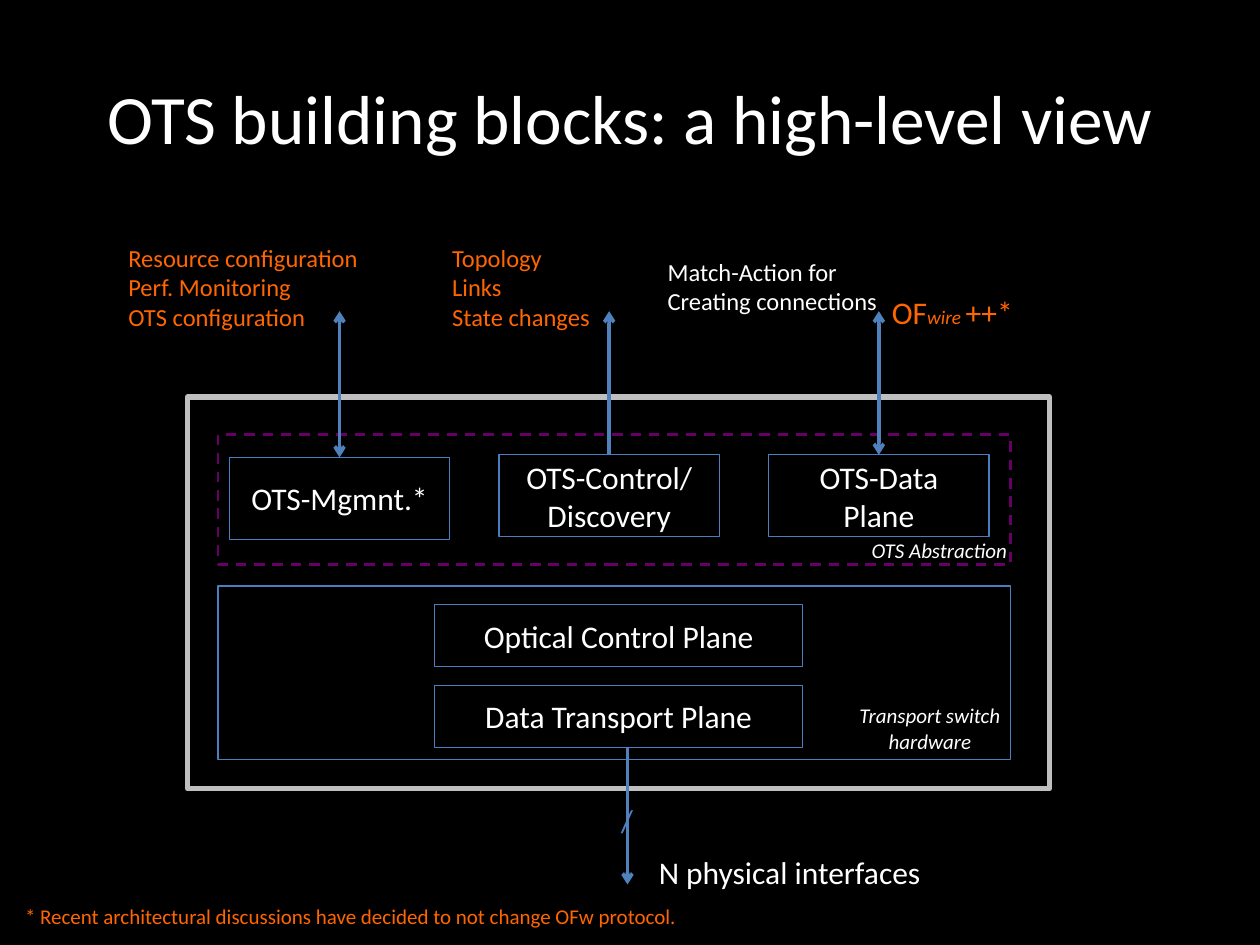
from lxml.etree import SubElement
from pptx import Presentation
from pptx.dml.color import RGBColor
from pptx.enum.dml import MSO_LINE
from pptx.enum.shapes import MSO_CONNECTOR, MSO_SHAPE
from pptx.enum.text import MSO_ANCHOR, MSO_AUTO_SIZE, PP_ALIGN
from pptx.oxml.ns import qn
from pptx.util import Inches, Pt

THEME = {
    "font": "Calibri",
    "background": "000000", "text": "FFFFFF", "accent": "FF6600",
    "frame": "BFBFBF", "box": "4B7EBC", "arrow": "4F81BD", "abstraction": "660066",
    "title": 39.6, "body": 18, "label": 14, "note": 12, "subscript": 11,
}

# Content
TITLE = "OTS building blocks: a high-level view"
# Text lines, top of box, whether the arrow also points down at the box
PLANES = [
    (["OTS-Mgmnt.*"], 3.63, True),
    (["OTS-Control/", "Discovery"], 3.61, False),
    (["OTS-Data Plane"], 3.61, True),
]
HARDWARE_LAYERS = ["Optical Control Plane", "Data Transport Plane"]
# Place, outline colour, line width, dash
FRAMES = [
    ((1.49, 3.15, 6.84, 3.11), "frame", 3, None),
    ((1.73, 4.65, 6.29, 1.38), "box", 0.75, None),
    ((1.73, 3.45, 6.29, 1.03), "abstraction", 1.5, MSO_LINE.DASH),
]
# Place, lines, size, colour, centred and italic
LABELS = [
    ((6.79, 4.22, 1.33, 0.3), ["OTS Abstraction"], "note", "text", True),
    ((6.69, 5.53, 1.38, 0.5), ["Transport switch", "hardware"], "note", "text", True),
    ((4.83, 6.31, 0.3, 0.4), ["/"], "body", "arrow", False),
    ((5.13, 6.72, 2.32, 0.4), ["N physical interfaces"], "body", "text", False),
    ((0.92, 1.88, 2.05, 0.81),
     ["Resource configuration", "Perf. Monitoring", "OTS configuration"],
     "label", "accent", False),
    ((3.49, 1.88, 1.31, 0.81), ["Topology", "Links", "State changes"],
     "label", "accent", False),
    ((5.2, 1.99, 1.88, 0.57), ["Match-Action for", "Creating connections"],
     "label", "text", False),
    ((0.1, 7.12, 5.45, 0.3),
     ["* Recent architectural discussions have decided to not change OFw protocol."],
     "note", "accent", False),
]
PROTOCOL = [("OF", "body", False), ("wire ", "subscript", True), ("++*", "body", False)]

# Grid
PLANE_LEFT, PLANE_STEP, PLANE_WIDTH, PLANE_HEIGHT = 1.82, 2.14, 1.75, 0.65
LAYER_LEFT, LAYER_TOP, LAYER_STEP, LAYER_WIDTH, LAYER_HEIGHT = 3.45, 4.8, 0.64, 2.92, 0.49
ARROW_TOP = 2.47


def color(name):
    return RGBColor.from_string(THEME[name])


def inches(place):
    return [Inches(value) for value in place]


def add_run(paragraph, text, size, color_name="text", italic=False):
    run = paragraph.add_run()
    run.text = text
    run.font.name = THEME["font"]
    run.font.size = Pt(THEME[size])
    run.font.color.rgb = color(color_name)
    run.font.italic = italic


def add_box(slide, place, line_color="box", width=0.75, dash=None, lines=()):
    shape = slide.shapes.add_shape(MSO_SHAPE.RECTANGLE, *inches(place))
    shape.shadow.inherit = False
    shape.fill.background()
    shape.line.color.rgb = color(line_color)
    shape.line.width = Pt(width)
    if dash:
        shape.line.dash_style = dash
    shape.text_frame.vertical_anchor = MSO_ANCHOR.MIDDLE
    paragraph = shape.text_frame.paragraphs[0]
    paragraph.alignment = PP_ALIGN.CENTER
    for index, line in enumerate(lines):
        if index:
            paragraph.add_line_break()
        add_run(paragraph, line, "body")
    return shape


def add_label(slide, place, paragraphs, centred=False):
    """Each paragraph is a list of run arguments."""
    frame = slide.shapes.add_textbox(*inches(place)).text_frame
    frame.word_wrap = False
    frame.auto_size = MSO_AUTO_SIZE.SHAPE_TO_FIT_TEXT
    for index, runs in enumerate(paragraphs):
        paragraph = frame.add_paragraph() if index else frame.paragraphs[0]
        paragraph.alignment = PP_ALIGN.CENTER if centred else PP_ALIGN.LEFT
        for run in runs:
            add_run(paragraph, *run)


def add_arrow(slide, x, start, end, both_ends=False):
    arrow = slide.shapes.add_connector(
        MSO_CONNECTOR.STRAIGHT, *inches((x, start, x, end)))
    arrow.line.color.rgb = color("arrow")
    arrow.line.width = Pt(2)
    line = arrow.line._get_or_add_ln()
    for tag in ("a:headEnd", "a:tailEnd") if both_ends else ("a:tailEnd",):
        SubElement(line, qn(tag), type="arrow")
    SubElement(arrow._element.spPr, qn("a:effectLst"))
    return arrow


def main():
    presentation = Presentation()
    presentation.slide_width, presentation.slide_height = Inches(10), Inches(7.5)
    slide = presentation.slides.add_slide(presentation.slide_layouts[6])
    slide.background.fill.solid()
    slide.background.fill.fore_color.rgb = color("background")

    # Title
    title = slide.shapes.add_textbox(*inches((0.5, 0.3, 9, 1.25))).text_frame
    title.word_wrap = True
    title.vertical_anchor = MSO_ANCHOR.MIDDLE
    title.paragraphs[0].alignment = PP_ALIGN.CENTER
    add_run(title.paragraphs[0], TITLE, "title")

    # Switch, hardware and abstraction frames
    for frame in FRAMES:
        add_box(slide, *frame)

    # Planes with their arrows
    for column, (lines, top, both_ends) in enumerate(PLANES):
        left = PLANE_LEFT + column * PLANE_STEP
        box = add_box(slide, (left, top, PLANE_WIDTH, PLANE_HEIGHT), lines=lines)
        arrow = add_arrow(slide, left + PLANE_WIDTH / 2, top, ARROW_TOP, both_ends)
        arrow.begin_connect(box, 0)

    # Hardware layers and the physical interfaces below them
    for row, text in enumerate(HARDWARE_LAYERS):
        top = LAYER_TOP + row * LAYER_STEP
        add_box(slide, (LAYER_LEFT, top, LAYER_WIDTH, LAYER_HEIGHT), lines=[text])
    add_arrow(slide, 4.98, 5.93, 7.02)

    # Labels
    for place, lines, size, color_name, emphasis in LABELS:
        add_label(slide, place,
                  [[(line, size, color_name, emphasis)] for line in lines], emphasis)
    add_label(slide, (6.98, 2.28, 1.17, 0.4),
              [[(text, size, "accent", italic) for text, size, italic in PROTOCOL]])

    presentation.save("out.pptx")


if __name__ == "__main__":
    main()
